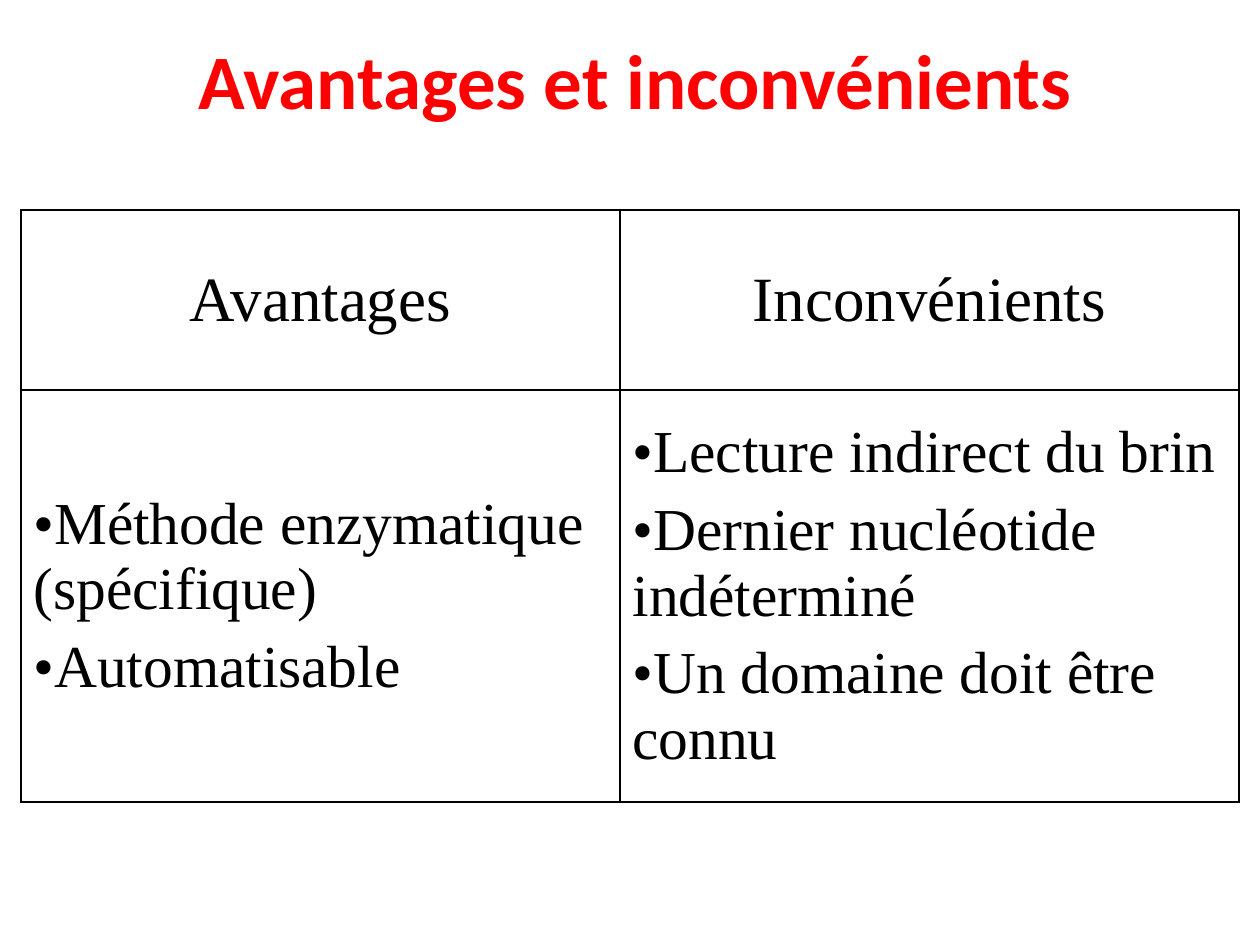
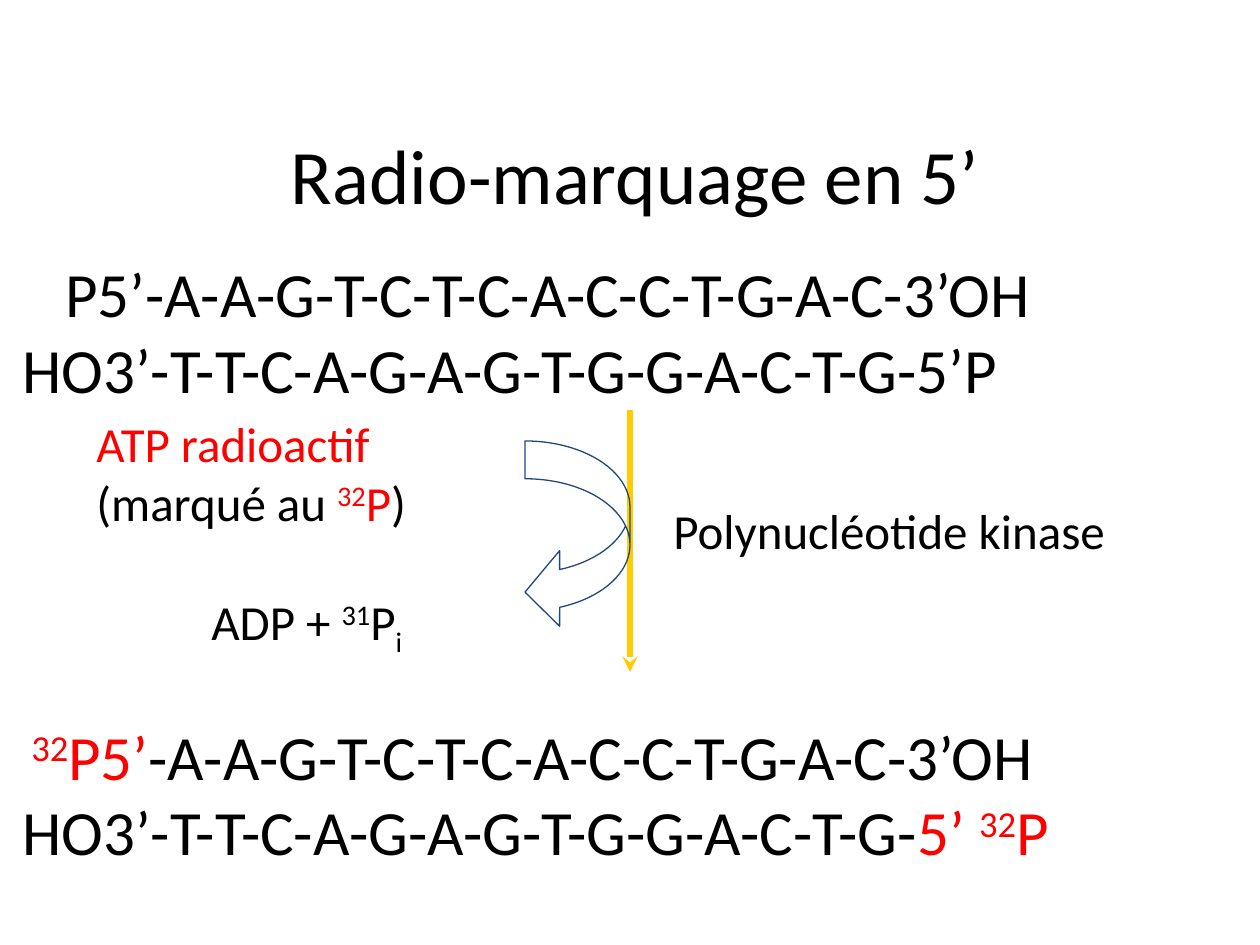
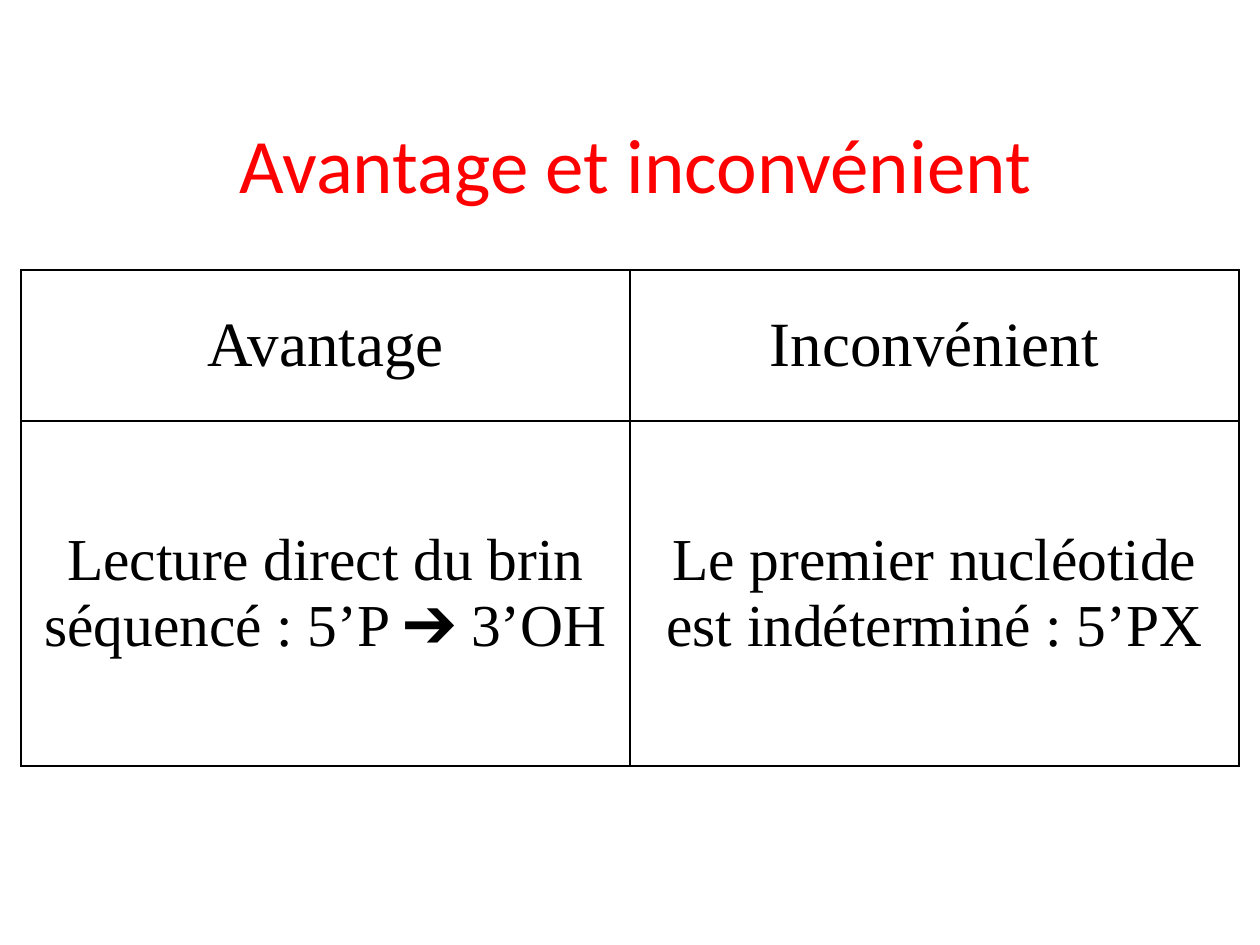
from lxml import etree
from pptx import Presentation
from pptx.dml.color import RGBColor
from pptx.enum.shapes import MSO_CONNECTOR, MSO_SHAPE
from pptx.enum.text import MSO_ANCHOR, PP_ALIGN
from pptx.oxml.ns import qn
from pptx.util import Emu, Pt

LINE = MSO_CONNECTOR.STRAIGHT
CURVED_ARROW = MSO_SHAPE.CURVED_LEFT_ARROW
MIDDLE = MSO_ANCHOR.MIDDLE
LEFT, CENTER = PP_ALIGN.LEFT, PP_ALIGN.CENTER

BLACK = RGBColor(0, 0, 0)
RED = RGBColor(0xFF, 0, 0)
YELLOW = RGBColor(0xFF, 0xCC, 0)
NAVY = RGBColor(0x1F, 0x49, 0x7D)

PX_PER_INCH = 126
TITLE_ONLY = 5
SUPERSCRIPT, SUBSCRIPT = 30000, -25000

TITLE_FONT = {"name": "Calibri", "size": Pt(44)}
SEQUENCE_FONT = {"name": "Calibri", "size": Pt(36)}
LABEL_FONT = {"name": "Calibri", "size": Pt(28)}
HEADING_FONT = {"name": "Times New Roman", "size": Pt(36)}
ENTRY_FONT = {"name": "Times New Roman", "size": Pt(34)}


def px(length):
    return Emu(round(length * 914400 / PX_PER_INCH))


def set_values(target, values):
    for name, value in values.items():
        setattr(target, name, value)


def place(left, top, width, height):
    return [px(length) for length in (left, top, width, height)]


def write_run(paragraph, text, font, color=BLACK, baseline=0):
    run = paragraph.add_run()
    run.text = text
    set_values(run.font, font)
    run.font.color.rgb = color
    if baseline:
        run._r.get_or_add_rPr().set("baseline", str(baseline))


def write_lines(frame, lines, font, alignment=LEFT, indents=(), bullet=False, gap=0):
    for index, runs in enumerate(lines):
        paragraph = frame.paragraphs[0] if index == 0 else frame.add_paragraph()
        properties = paragraph._p.get_or_add_pPr()
        if index < len(indents):
            properties.set("marL", str(px(indents[index])))
        if bullet:
            properties.set("marL", "0")
            properties.set("indent", "0")
            etree.SubElement(properties, qn("a:buFont"), typeface=font["name"])
            etree.SubElement(properties, qn("a:buChar"), char="•")
        paragraph.alignment = alignment
        if index and gap:
            paragraph.space_before = Pt(gap)
        for run in runs:
            write_run(paragraph, run[0], font, *run[1:])


def add_titled_slide(deck, title, top, color, bold=False):
    slide = deck.slides.add_slide(deck.slide_layouts[TITLE_ONLY])
    heading = slide.shapes.title
    box = dict(zip(("left", "top", "width", "height"), place(42, top, 1187, 158)))
    set_values(heading, box)
    heading.text_frame.vertical_anchor = MIDDLE
    write_lines(heading.text_frame, [[(title, color)]], {**TITLE_FONT, "bold": bold}, CENTER)
    return slide


def add_text(slide, box, lines, font, indents=()):
    frame = slide.shapes.add_textbox(*place(*box)).text_frame
    set_values(frame, {"word_wrap": True, "vertical_anchor": MIDDLE})
    write_lines(frame, lines, font, indents=indents)


def add_borders(cell):
    properties = cell._tc.get_or_add_tcPr()
    for index, side in enumerate(("lnL", "lnR", "lnT", "lnB")):
        border = etree.Element(qn(f"a:{side}"), w=str(Pt(1)))
        fill = etree.SubElement(border, qn("a:solidFill"))
        etree.SubElement(fill, qn("a:srgbClr"), val=str(BLACK))
        properties.insert(index, border)


def add_comparison(slide, top, widths, heights, headings, entries, bulleted=False):
    box = place(21, top, sum(widths), sum(heights))
    table = slide.shapes.add_table(len(heights), len(widths), *box).table
    set_values(table, {"first_row": False, "horz_banding": False})
    for column, width in zip(table.columns, widths):
        column.width = px(width)
    for row, height in zip(table.rows, heights):
        row.height = px(height)
    for column, (heading, items) in enumerate(zip(headings, entries)):
        heading_cell, entry_cell = table.cell(0, column), table.cell(1, column)
        for cell in (heading_cell, entry_cell):
            cell.vertical_anchor = MIDDLE
            cell.fill.background()
            add_borders(cell)
        write_lines(heading_cell.text_frame, [[(heading,)]], HEADING_FONT, CENTER)
        write_lines(entry_cell.text_frame, [[(item,)] for item in items], ENTRY_FONT,
                    LEFT if bulleted else CENTER, bullet=bulleted, gap=7)


def add_reaction_arrow(slide, x, top, bottom):
    arrow = slide.shapes.add_connector(LINE, px(x), px(top), px(x), px(bottom))
    arrow.line.color.rgb = YELLOW
    arrow.line.width = Pt(3)
    etree.SubElement(arrow.line._get_or_add_ln(), qn("a:tailEnd"), type="stealth")
    etree.SubElement(arrow._element.spPr, qn("a:effectLst"))


def add_exchange_arrow(slide, box):
    arrow = slide.shapes.add_shape(CURVED_ARROW, *place(*box))
    for index, value in enumerate((0.36, 0.72, 0.33)):
        arrow.adjustments[index] = value
    arrow.shadow.inherit = False
    arrow.fill.background()
    arrow.line.color.rgb = NAVY
    arrow.line.width = Pt(0.75)


def build_labelling(deck):
    slide = add_titled_slide(deck, "Radio-marquage en 5’", 95, BLACK)
    upper = "-A-A-G-T-C-T-C-A-C-C-T-G-A-C-3’OH"
    lower = "HO3’-T-T-C-A-G-A-G-T-G-G-A-C-T-G-"
    add_text(slide, (10, 241, 1239, 179),
             [[("P5’" + upper,)], [(lower + "5’P",)]], SEQUENCE_FONT, (43,))
    add_text(slide, (10, 704, 1239, 178),
             [[("32", RED, SUPERSCRIPT), ("P5’", RED), (upper,)],
              [(lower,), ("5’ ", RED), ("32", RED, SUPERSCRIPT), ("P", RED)]],
             SEQUENCE_FONT, (9,))
    add_reaction_arrow(slide, 630, 410, 672)
    add_text(slide, (661, 472, 557, 116), [[("Polynucléotide kinase",)]], LABEL_FONT)
    add_exchange_arrow(slide, (525, 441, 105, 189))
    add_text(slide, (84, 415, 378, 115),
             [[("ATP radioactif", RED)],
              [("(marqué au ",), ("32", RED, SUPERSCRIPT), ("P", RED), (")",)]], LABEL_FONT)
    add_text(slide, (199, 567, 252, 116),
             [[("ADP + ",), ("31", BLACK, SUPERSCRIPT), ("P",), ("i", BLACK, SUBSCRIPT)]],
             LABEL_FONT)


def main():
    deck = Presentation()
    deck.slide_width, deck.slide_height = px(1260), px(945)

    enzymatic = add_titled_slide(deck, "Avantages et inconvénients", 0, RED, bold=True)
    add_comparison(enzymatic, 210, (599, 619), (180, 412), ("Avantages", "Inconvénients"),
                   (("Méthode enzymatique (spécifique)", "Automatisable"),
                    ("Lecture indirect du brin", "Dernier nucléotide indéterminé",
                     "Un domaine doit être connu")), bulleted=True)

    build_labelling(deck)

    chemical = add_titled_slide(deck, "Avantage et inconvénient", 84, RED)
    add_comparison(chemical, 270, (609, 609), (151, 345), ("Avantage", "Inconvénient"),
                   (("Lecture direct du brin séquencé : 5’P ➔ 3’OH",),
                    ("Le premier nucléotide est indéterminé : 5’PX",)))

    deck.save("out.pptx")


if __name__ == "__main__":
    main()
